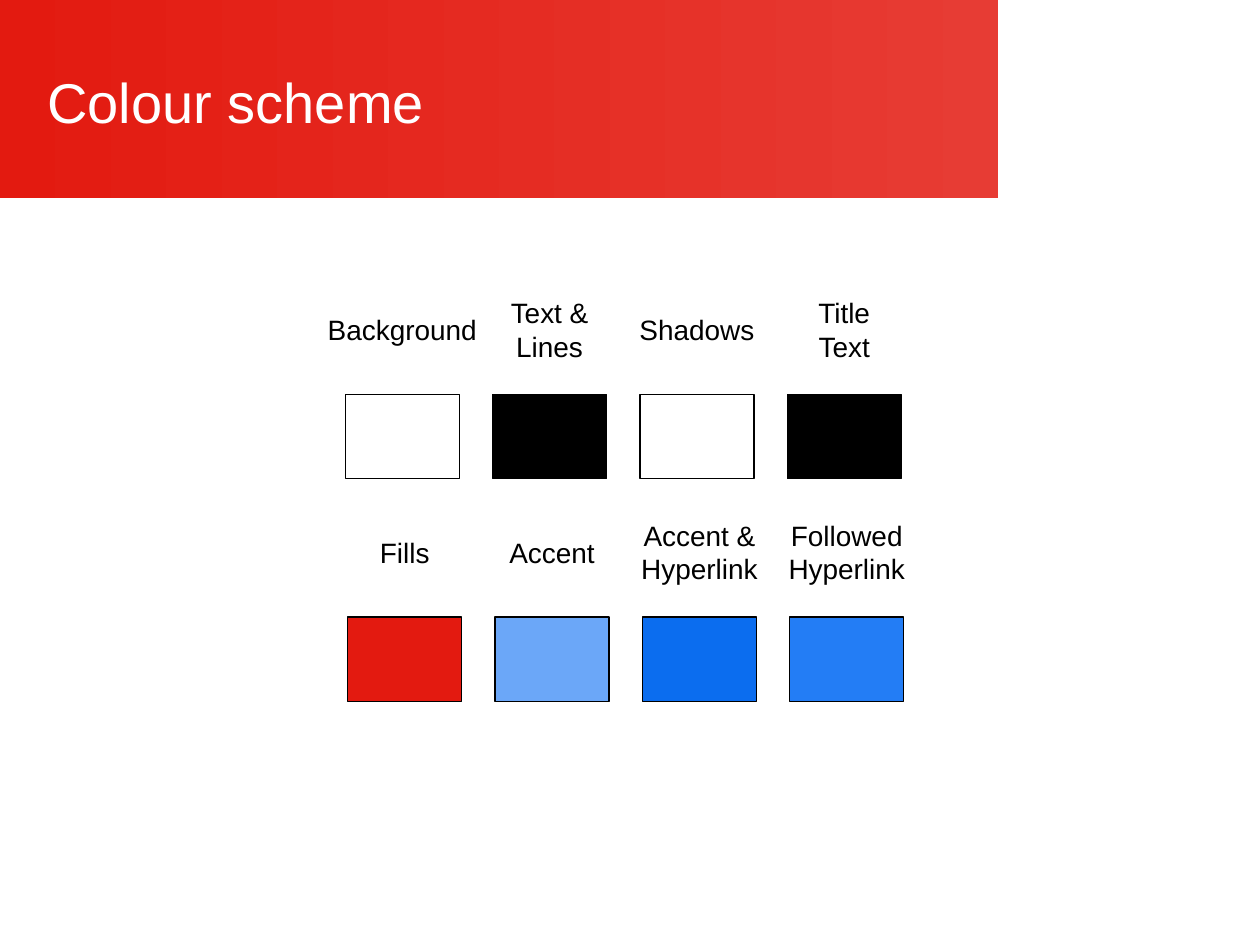
from pptx import Presentation
from pptx.dml.color import RGBColor
from pptx.enum.shapes import MSO_SHAPE
from pptx.enum.text import MSO_ANCHOR, MSO_AUTO_SIZE, PP_ALIGN
from pptx.util import Cm, Pt

WHITE = RGBColor(0xFF, 0xFF, 0xFF)
BLACK = RGBColor(0x00, 0x00, 0x00)
RED = RGBColor(0xE3, 0x1A, 0x10)
LIGHT_RED = RGBColor(0xE7, 0x3C, 0x34)
PALE_BLUE = RGBColor(0x6B, 0xA7, 0xF8)
BLUE = RGBColor(0x0B, 0x6D, 0xEF)
BRIGHT_BLUE = RGBColor(0x23, 0x7D, 0xF5)
FONT = "Arial"

# Each swatch: label paragraphs, label width in cm, colour
THEME_ROW = [
    (["Background"], 3.55, WHITE),
    (["Text &", "Lines"], 2.15, BLACK),
    (["Shadows"], 2.85, WHITE),
    (["Title\vText"], 1.6, BLACK),
]
ACCENT_ROW = [
    (["Fills"], 1.52, RED),
    (["Accent"], 2.25, PALE_BLUE),
    (["Accent &", "Hyperlink"], 2.95, BLUE),
    (["Followed", "Hyperlink"], 2.95, BRIGHT_BLUE),
]


def add_run(p, text, size, color):
    for i, line in enumerate(text.split("\v")):
        if i:
            p.add_line_break()
        r = p.add_run()
        r.text = line
        r.font.name = FONT
        r.font.size = Pt(size)
        r.font.color.rgb = color


def add_rect(s, left, top, width, height):
    sp = s.shapes.add_shape(MSO_SHAPE.RECTANGLE, left, top, width, height)
    sp.shadow.inherit = False
    return sp


def add_header(s, left, top, width, height, title):
    # Gradient band, sent behind the title
    band = add_rect(s, left, top, width, height)
    band.line.fill.background()
    band.fill.gradient()
    band.fill.gradient_angle = 0
    for stop, color, position in zip(band.fill.gradient_stops, (RED, LIGHT_RED), (0, 1)):
        stop.color.rgb = color
        stop.position = position
    s.shapes._spTree.insert(2, band._element)

    # Title
    sp = s.shapes.title
    sp.left, sp.top = left + Cm(0.7), top + Cm(0.76)
    sp.width, sp.height = width - Cm(1.12), height - Cm(1.43)
    tf = sp.text_frame
    tf.vertical_anchor = MSO_ANCHOR.MIDDLE
    p = tf.paragraphs[0]
    p.alignment = PP_ALIGN.LEFT
    add_run(p, title, 32, WHITE)


def add_label(s, center_x, center_y, width, lines):
    rows = len(lines) + sum(line.count("\v") for line in lines)
    height = Cm(0.94) if rows == 1 else Cm(1.63)
    box = s.shapes.add_textbox(center_x - width // 2, center_y - height // 2, width, height)
    tf = box.text_frame
    tf.word_wrap = False
    tf.auto_size = MSO_AUTO_SIZE.SHAPE_TO_FIT_TEXT
    for i, line in enumerate(lines):
        p = tf.add_paragraph() if i else tf.paragraphs[0]
        p.alignment = PP_ALIGN.CENTER
        add_run(p, line, 16, BLACK)


def add_swatch_row(s, left, top, swatches):
    width, height, pitch = Cm(2.3), Cm(1.7), Cm(2.97)
    for i, (lines, label_width, color) in enumerate(swatches):
        x = left + i * pitch
        sp = add_rect(s, x, top, width, height)
        sp.fill.solid()
        sp.fill.fore_color.rgb = color
        sp.line.color.rgb = BLACK
        sp.line.width = Pt(0.75)
        add_label(s, x + width // 2, top - Cm(1.3), Cm(label_width), lines)


def main():
    prs = Presentation()
    prs.slide_width, prs.slide_height = Cm(25.4), Cm(19.05)
    s = prs.slides.add_slide(prs.slide_layouts[5])
    add_header(s, Cm(0), Cm(0), Cm(20.12), Cm(4), "Colour scheme")
    add_swatch_row(s, Cm(6.96), Cm(7.95), THEME_ROW)
    add_swatch_row(s, Cm(7.01), Cm(12.44), ACCENT_ROW)
    prs.save("out.pptx")


if __name__ == "__main__":
    main()
